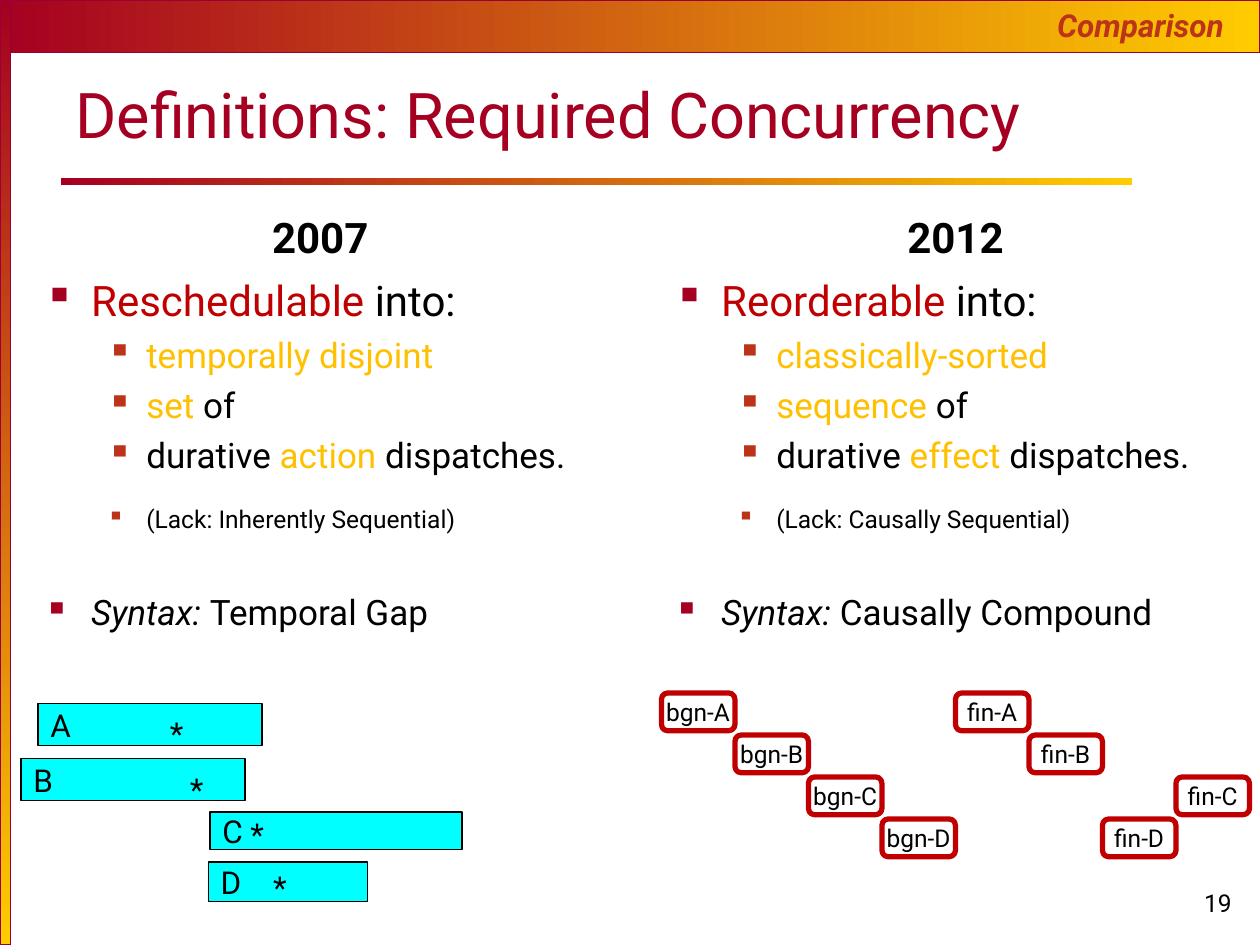
import pptx
import pptx.util
import pptx.dml.color
import pptx.enum.shapes
import pptx.enum.text
from dataclasses import dataclass
from lxml import etree

Pt = pptx.util.Pt
RGB = pptx.dml.color.RGBColor.from_string
Shape = pptx.enum.shapes.MSO_SHAPE
Align = pptx.enum.text.PP_ALIGN
Anchor = pptx.enum.text.MSO_ANCHOR


@dataclass(frozen=True)
class Theme:
    font: str = "Roboto"
    crimson: str = "A50021"
    gold: str = "FFCC00"
    edge: str = "990033"
    rust: str = "BC3319"
    red: str = "C00000"
    amber: str = "FFC000"
    cyan: str = "00FFFF"
    black: str = "000000"
    title: int = 36
    heading: int = 24
    body: int = 20
    label: int = 18
    small: int = 14


theme = Theme()


def write(para, text, size=theme.small, color=theme.black, bold=False, italic=False, align=None):
    """Add one formatted span of text to a paragraph."""
    span = para.add_run()
    span.text = text
    span.font.name = theme.font
    span.font.size = Pt(size)
    span.font.color.rgb = RGB(color)
    span.font.bold = bold
    span.font.italic = italic
    if align is not None:
        para.alignment = align


def add_bullet(para, color, left, hanging):
    """Give a paragraph a square bullet and a hanging indent."""
    properties = para._p.get_or_add_pPr()
    properties.set("marL", str(Pt(left)))
    properties.set("indent", str(-Pt(hanging)))
    namespace = "{http://schemas.openxmlformats.org/drawingml/2006/main}"
    bullet_color = etree.SubElement(properties, namespace + "buClr")
    etree.SubElement(bullet_color, namespace + "srgbClr", val=color)
    etree.SubElement(properties, namespace + "buChar", char="▪")


deck = pptx.Presentation()
deck.slide_width, deck.slide_height = Pt(720), Pt(540)
page = deck.slides.add_slide(deck.slide_layouts[6])

# Gradient bars: top, left and title rule
for left, top, width, height, angle, outlined in [
    (0, 0, 720, 30, 0, True),
    (0, 0, 6, 540, 270, True),
    (35, 102, 612, 3.6, 0, False),
]:
    bar = page.shapes.add_shape(Shape.RECTANGLE, Pt(left), Pt(top), Pt(width), Pt(height))
    bar.shadow.inherit = False
    bar.fill.gradient()
    bar.fill.gradient_angle = angle
    for stop, color in zip(bar.fill.gradient_stops, (theme.crimson, theme.gold)):
        stop.color.rgb = RGB(color)
    for stop, position in zip(bar.fill.gradient_stops, (0, 1)):
        stop.position = position
    if outlined:
        bar.line.color.rgb = RGB(theme.edge)
        bar.line.width = Pt(0.75)
    else:
        bar.line.fill.background()

# Title, column headings, section tag and page number
heading = dict(size=theme.heading, bold=True, align=Align.CENTER)
for text, left, top, width, height, anchor, wrap, style in [
    ("Definitions: Required Concurrency", 36, 48, 648, 42, Anchor.BOTTOM, True,
     dict(size=theme.title, color=theme.crimson)),
    ("2007", 12, 111, 342, 42, Anchor.BOTTOM, True, heading),
    ("2012", 378, 111.5, 336, 41.5, Anchor.BOTTOM, True, heading),
    ("Comparison", 597, 0, 123, 29, Anchor.TOP, False,
     dict(size=theme.label, color=theme.rust, bold=True, italic=True)),
    ("19", 672, 504, 48, 36, Anchor.TOP, True, dict(align=Align.CENTER)),
]:
    box = page.shapes.add_textbox(Pt(left), Pt(top), Pt(width), Pt(height))
    box.text_frame.word_wrap = wrap
    box.text_frame.vertical_anchor = anchor
    write(box.text_frame.paragraphs[0], text, **style)

# Bulleted columns: (level, size, space before, spans)
columns = [
    (18, 336, "Reschedulable", [("temporally disjoint", theme.amber)],
     [("set ", theme.amber), ("of", theme.black)],
     "action", "(Lack: Inherently Sequential)", "Temporal Gap"),
    (378, 342, "Reorderable", [("classically-sorted", theme.amber)],
     [("sequence", theme.amber), (" of", theme.black)],
     "effect", "(Lack: Causally Sequential)", "Causally Compound"),
]
for left, width, verb, kind, group, unit, lack, syntax in columns:
    box = page.shapes.add_textbox(Pt(left), Pt(153.5), Pt(width), Pt(368.5))
    box.text_frame.word_wrap = True
    dispatches = [("durative ", theme.black), (unit, theme.amber), (" dispatches.", theme.black)]
    lines = [
        (0, theme.heading, 0, [(verb, theme.red), (" into:", theme.black)]),
        (1, theme.body, 4.7, kind),
        (1, theme.body, 4.7, group),
        (1, theme.body, 4.7, dispatches),
        (1, theme.small, 16, [(lack, theme.black)]),
        (0, theme.body, 32.8, [("Syntax: ", theme.black), (syntax, theme.black)]),
    ]
    for index, (level, size, before, spans) in enumerate(lines):
        para = box.text_frame.add_paragraph() if index else box.text_frame.paragraphs[0]
        para.level = level
        para.space_before = Pt(before)
        if level:
            add_bullet(para, theme.rust, 58.5, 22.5)
        else:
            add_bullet(para, theme.crimson, 27, 27)
        for text, color in spans:
            write(para, text, size=size, color=color, italic=text == "Syntax: ")

# Timeline bars, each with a starred moment
for name, left, top, width, height, star_left, star_top in [
    ("A", 21.75, 402, 128, 24, 90, 404.5),
    ("B", 12, 433.5, 128, 24, 101.5, 436.5),
    ("C", 120, 464, 144, 21.5, 136, 462),
    ("D", 119, 492.5, 91, 22.75, 149, 492.5),
]:
    action = page.shapes.add_group_shape()
    bar = action.shapes.add_shape(Shape.RECTANGLE, Pt(left), Pt(top), Pt(width), Pt(height))
    bar.shadow.inherit = False
    bar.fill.solid()
    bar.fill.fore_color.rgb = RGB(theme.cyan)
    bar.line.color.rgb = RGB(theme.black)
    bar.line.width = Pt(0.75)
    bar.text_frame.vertical_anchor = Anchor.MIDDLE
    write(bar.text_frame.paragraphs[0], name, size=theme.label, align=Align.LEFT)
    star = action.shapes.add_textbox(Pt(star_left), Pt(star_top), Pt(19.5), Pt(20))
    star.text_frame.word_wrap = True
    write(star.text_frame.paragraphs[0], "*", size=theme.label)

# Begin and finish effects on a grid of columns and rows
for row, (name, begin, finish) in enumerate([("A", 0, 4), ("B", 1, 5), ("C", 2, 7), ("D", 3, 6)]):
    for prefix, column in (("bgn", begin), ("fin", finish)):
        effect = page.shapes.add_shape(
            Shape.ROUNDED_RECTANGLE, Pt(378 + 42 * column), Pt(396 + 24 * row), Pt(42), Pt(21.6))
        effect.shadow.inherit = False
        effect.fill.background()
        effect.line.color.rgb = RGB(theme.red)
        effect.line.width = Pt(3)
        effect.text_frame.word_wrap = False
        effect.text_frame.vertical_anchor = Anchor.MIDDLE
        write(effect.text_frame.paragraphs[0], f"{prefix}-{name}", align=Align.CENTER)

deck.save("out.pptx")
